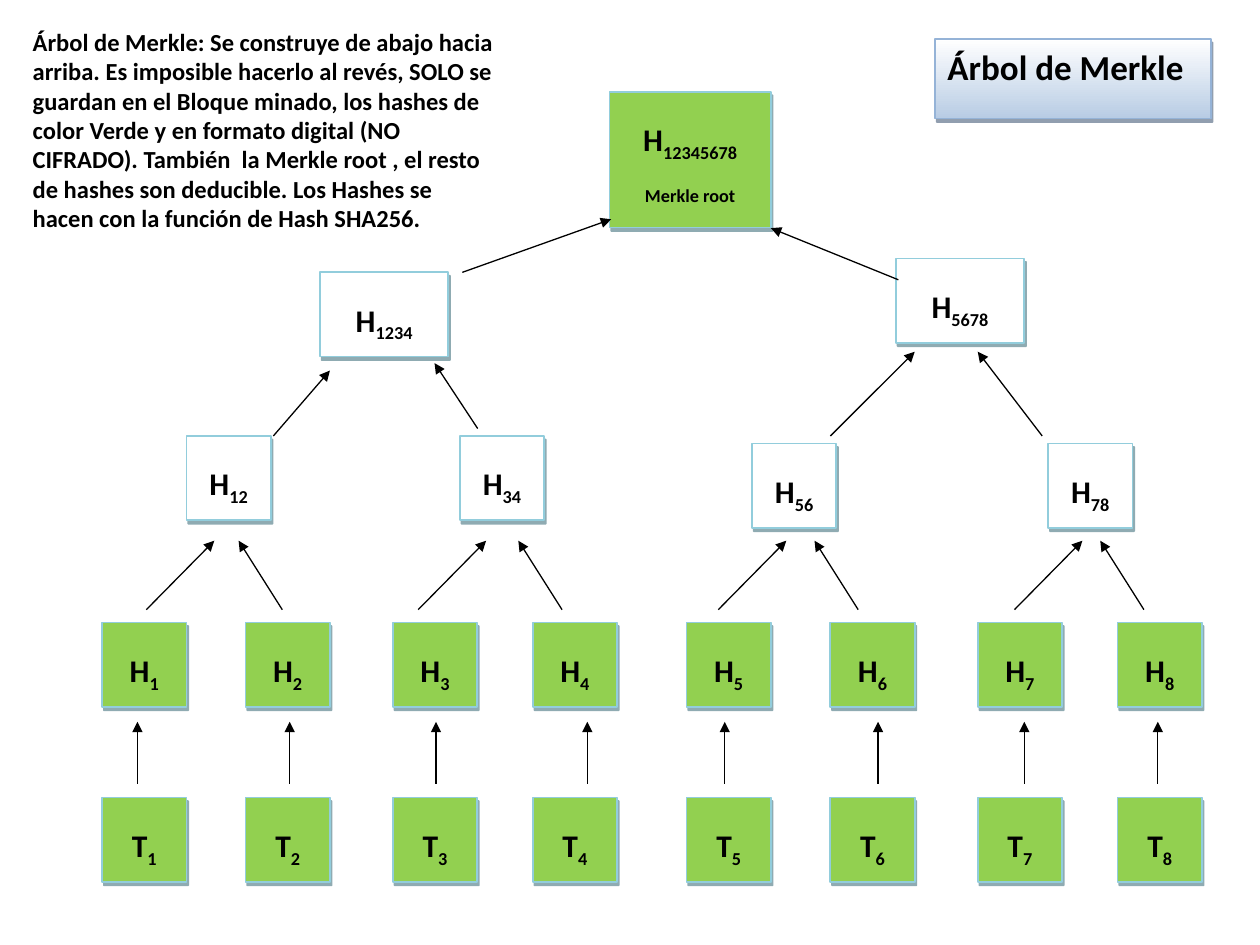
import pptx
import pptx.dml.color
import pptx.enum.shapes
import pptx.enum.text
import pptx.oxml
import pptx.oxml.ns
import pptx.util
from pptx.util import Cm

GREEN, WHITE, BLACK = "92D050", "FFFFFF", "000000"
NAMESPACE = pptx.oxml.ns.nsdecls("a")


def color(hex_string):
    return pptx.dml.color.RGBColor.from_string(hex_string)


def draw_box(place, runs, fill=WHITE, line="92CDDC", shadow="205867",
             size=18, top_inset=0.57, align="CENTER"):
    """Draw a rectangle; every second run is subscript, None is a line break."""
    shape = presentation.slides[0].shapes.add_shape(
        pptx.enum.shapes.MSO_SHAPE.RECTANGLE, *map(Cm, place))
    shape.fill.solid()
    shape.fill.fore_color.rgb = color(fill)
    shape.shadow.inherit = False
    if line:
        shape.line.color.rgb = color(line)
        shape.line.width = pptx.util.Pt(1)
        effects = shape._element.spPr.find(pptx.oxml.ns.qn("a:effectLst"))
        effects.append(pptx.oxml.parse_xml(
            f'<a:outerShdw {NAMESPACE} dist="28400" dir="3780000" algn="ctr" rotWithShape="0">'
            f'<a:srgbClr val="{shadow}"><a:alpha val="50000"/></a:srgbClr></a:outerShdw>'))
    else:
        shape.line.fill.background()

    frame = shape.text_frame
    frame.word_wrap = True
    frame.vertical_anchor = pptx.enum.text.MSO_ANCHOR.TOP
    frame.margin_top = Cm(top_inset)
    paragraph = frame.paragraphs[0]
    paragraph.alignment = getattr(pptx.enum.text.PP_ALIGN, align)
    paragraph.space_after = pptx.util.Pt(10)
    for index, text in enumerate(runs):
        if text is None:
            paragraph.add_line_break()
            continue
        run = paragraph.add_run()
        run.text = text
        run.font.name = "Calibri"
        run.font.size = pptx.util.Pt(size)
        run.font.bold = True
        run.font.color.rgb = color(BLACK)
        if index % 2:
            run._r.get_or_add_rPr().set("baseline", "-25000")
    return shape


presentation = pptx.Presentation()
presentation.slide_width = Cm(25.4)
presentation.slide_height = Cm(19.05)
slide = presentation.slides.add_slide(presentation.slide_layouts[6])

# Transactions and their hashes
SIDE = 1.7
leaf_lefts = [2.06, 4.95, 7.92, 10.74, 13.84, 16.74, 19.71, 22.53]
for letter, top in (("T", 16.08), ("H", 12.55)):
    for number, left in enumerate(leaf_lefts, start=1):
        draw_box((left, top, SIDE, SIDE), [letter, str(number)], GREEN)

# Inner hashes and Merkle root
for digits, left, top, width in (
    ("12", 3.76, 8.79, SIDE), ("34", 9.27, 8.79, SIDE),
    ("56", 15.16, 8.94, SIDE), ("78", 21.13, 8.94, SIDE),
    ("1234", 6.45, 5.49, 2.59), ("5678", 18.06, 5.21, 2.59),
):
    draw_box((left, top, width, SIDE), ["H", digits])
draw_box((12.29, 1.85, 3.25, 2.74), ["H", "12345678", None, "Merkle root"], GREEN)

# Arrows, from child to parent
arrows = [(x, 15.8, x, 14.55)
          for x in (2.77, 5.84, 8.79, 11.84, 14.61, 17.7, 20.65, 23.34)]
for starts, shift in (((2.95, 8.43, 14.48, 20.45), 1.37),
                      ((5.69, 11.33, 17.3, 23.06), -0.88)):
    arrows += [(x, 12.29, x + shift, 10.9) for x in starts]
arrows += [
    (5.51, 8.79, 6.65, 7.47), (9.63, 8.64, 8.76, 7.32),
    (16.74, 8.79, 18.44, 7.09), (21.01, 8.79, 19.71, 7.09),
    (9.32, 5.49, 12.32, 4.42), (18.11, 5.64, 15.54, 4.6),
]
for ends in arrows:
    connector = slide.shapes.add_connector(
        pptx.enum.shapes.MSO_CONNECTOR.STRAIGHT, *map(Cm, ends))
    connector.line.color.rgb = color(BLACK)
    connector.line.width = pptx.util.Pt(0.75)
    connector.line._get_or_add_ln().append(
        pptx.oxml.parse_xml(f'<a:tailEnd {NAMESPACE} type="triangle"/>'))
    connector._element.spPr.append(pptx.oxml.parse_xml(f"<a:effectLst {NAMESPACE}/>"))

# Explanation and title
explanation = (
    "Árbol de Merkle: Se construye de abajo hacia arriba. Es imposible hacerlo al revés, "
    "SOLO se guardan en el Bloque minado, los hashes de color Verde y en formato digital "
    "(NO CIFRADO). También  la Merkle root , el resto de hashes son deducible. "
    "Los Hashes se hacen con la función de Hash SHA256."
)
draw_box((0.41, 0.41, 9.88, 4.45), [explanation], line=None,
         size=14, top_inset=0.13, align="LEFT")
title = draw_box((18.85, 0.79, 5.56, 1.6), ["Árbol de Merkle"], line="95B3D7",
                 shadow="243F60", size=20, top_inset=0.13, align="LEFT")
title.fill.gradient()
title.fill.gradient_angle = 270
for stop, shade in zip(title.fill.gradient_stops, (WHITE, "B8CCE4")):
    stop.color.rgb = color(shade)

presentation.save("out.pptx")
